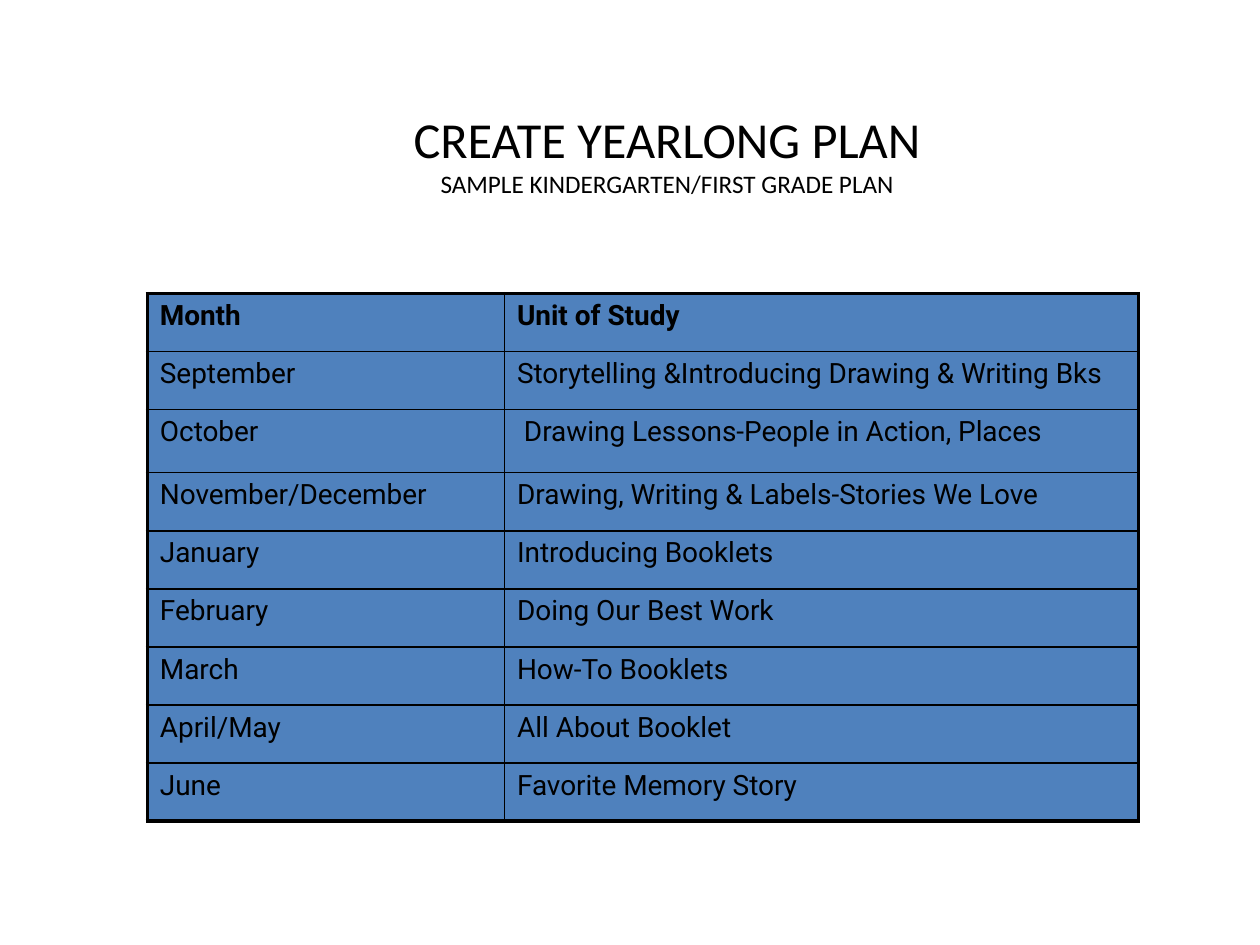
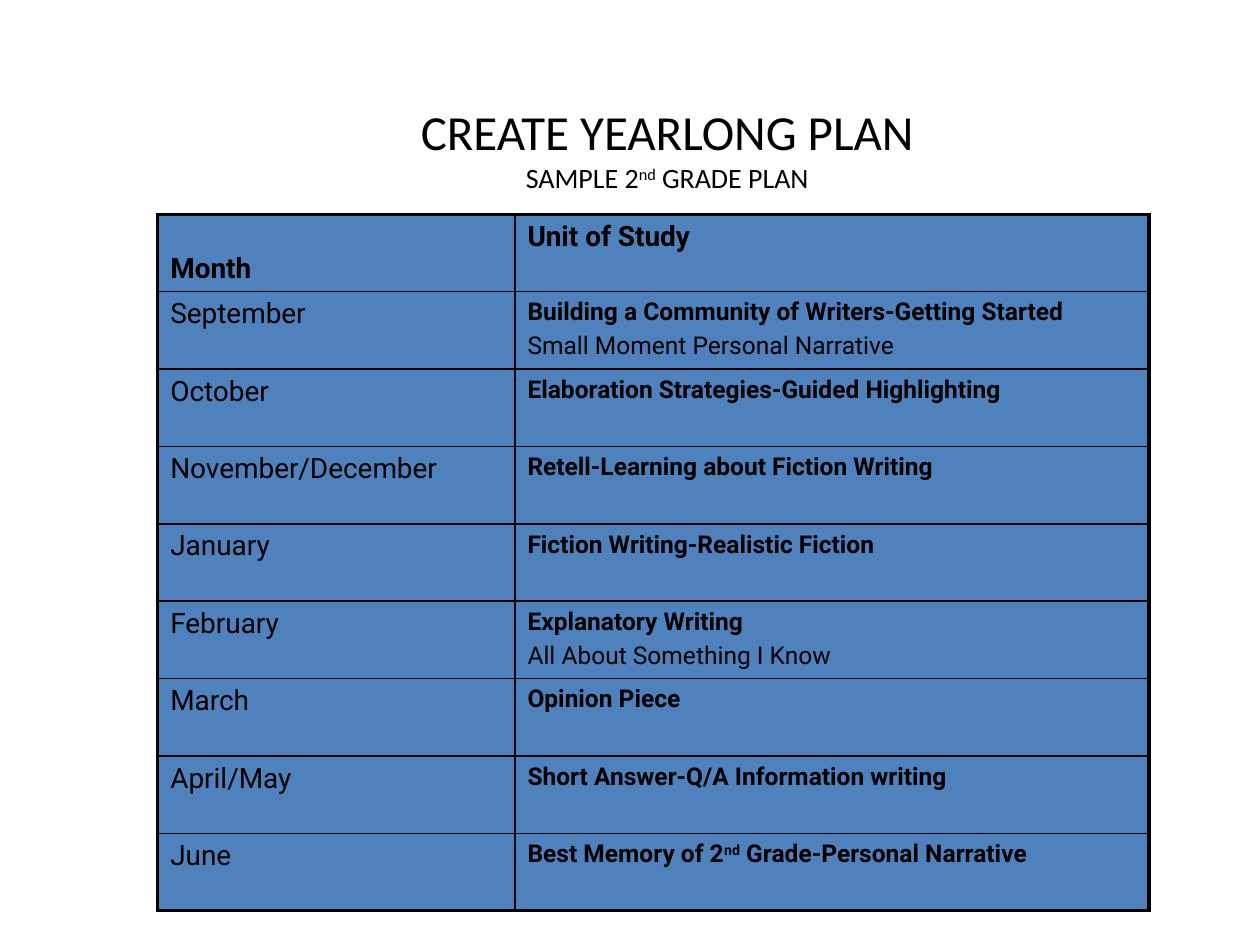
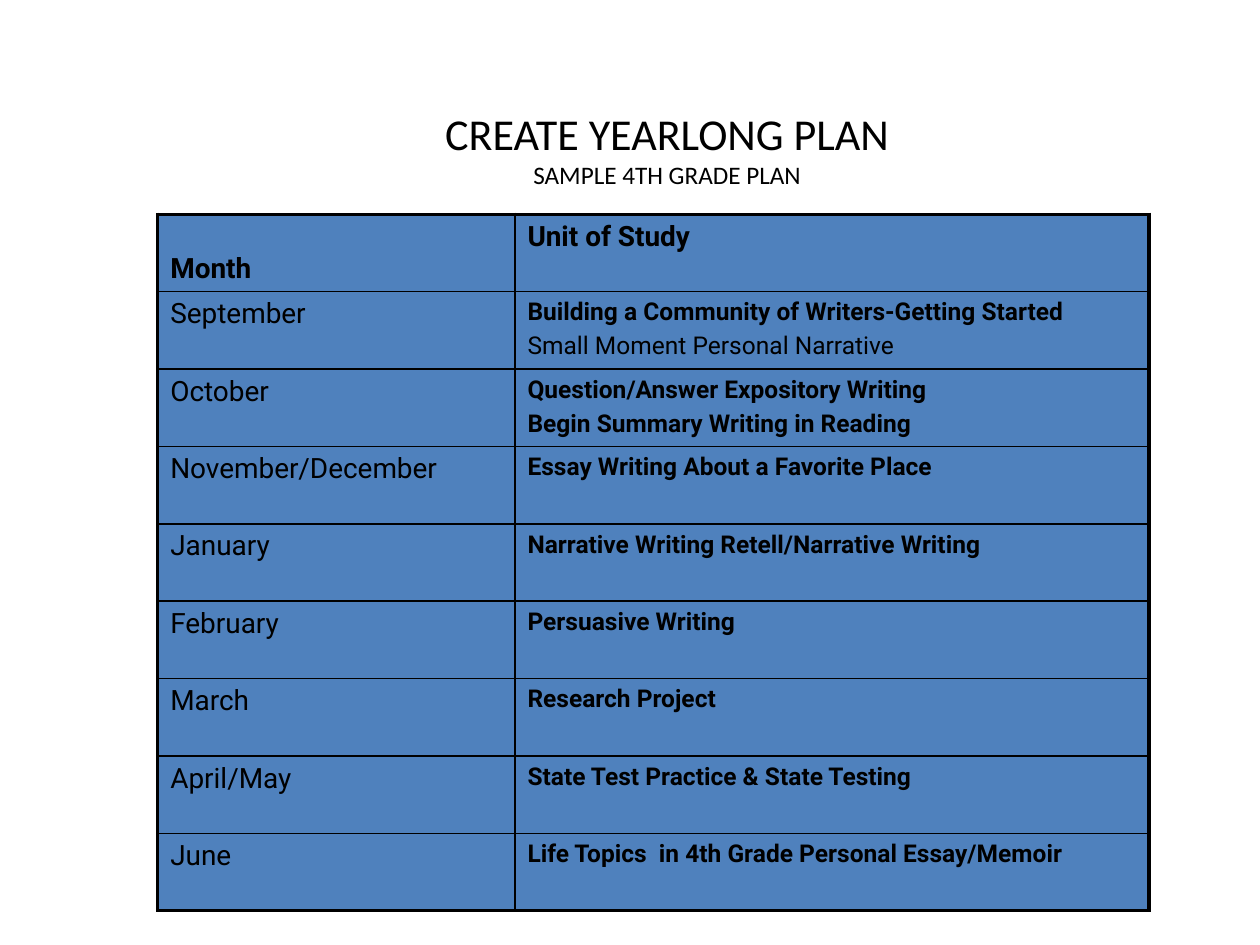
from dataclasses import dataclass

from lxml.etree import SubElement
from pptx import Presentation
from pptx.dml.color import RGBColor
from pptx.enum.text import MSO_ANCHOR, MSO_AUTO_SIZE, PP_ALIGN
from pptx.oxml.ns import qn
from pptx.util import Cm, Pt

# Content: text between ^ marks is raised; a unit may be (heading, detail)
HEADING = "CREATE YEARLONG PLAN"
COLUMN_HEADS = ("Month", "Unit of Study")
MONTHS = ("September", "October", "November/December", "January",
          "February", "March", "April/May", "June")
GETTING_STARTED = ("Building a Community of Writers-Getting Started",
                   "Small Moment Personal Narrative")

PLANS = [
    {
        "grade": "SAMPLE KINDERGARTEN/FIRST GRADE PLAN",
        "units": [
            "Storytelling &Introducing Drawing & Writing Bks",
            " Drawing Lessons-People in Action, Places",
            "Drawing, Writing & Labels-Stories We Love",
            "Introducing Booklets",
            "Doing Our Best Work",
            "How-To Booklets",
            "All About Booklet",
            "Favorite Memory Story",
        ],
        "layout": "compact", "heading_size": 28.8, "grade_size": 14.4,
    },
    {
        "grade": "SAMPLE 2^nd^ GRADE PLAN",
        "units": [
            GETTING_STARTED,
            "Elaboration Strategies-Guided Highlighting",
            "Retell-Learning about Fiction Writing",
            "Fiction Writing-Realistic Fiction",
            ("Explanatory Writing", "All About Something I Know"),
            "Opinion Piece",
            "Short Answer-Q/A Information writing",
            "Best Memory of 2^nd^ Grade-Personal Narrative",
        ],
        "layout": "detailed", "heading_size": 28, "grade_size": 16,
    },
    {
        "grade": "SAMPLE 4TH GRADE PLAN",
        "units": [
            GETTING_STARTED,
            "Question/Answer Expository Writing\nBegin Summary Writing in Reading",
            "Essay Writing About a Favorite Place",
            "Narrative Writing Retell/Narrative Writing",
            "Persuasive Writing",
            "Research Project",
            "State Test Practice & State Testing",
            "Life Topics  in 4th Grade Personal Essay/Memoir",
        ],
        "layout": "detailed", "heading_size": 25.2, "grade_size": 14.4,
    },
]


@dataclass(frozen=True)
class Theme:
    ink: str = "000000"
    cell: str = "4F81BD"
    title_font: str = "Calibri"
    table_font: str = "Roboto"
    month_size: float = 16
    line_gap: float = 2.8
    outer_line: float = 2.25
    inner_line: float = 1


THEME = Theme()

# Geometry in centimetres
TITLE_LEFT, TITLE_WIDTH = 2.11, 22.68
COLUMN_WIDTHS = (7.2, 12.78)
ROW_COUNT = len(MONTHS) + 1
LAYOUTS = {
    "compact": {
        "title_top": 3.02, "title_height": 0.15, "table": (2.97, 5.92),
        "rows": [1.27 if row == 2 else 1.17 for row in range(ROW_COUNT)],
        "unit_size": 16, "unit_bold": False, "month_anchor": MSO_ANCHOR.TOP,
    },
    "detailed": {
        "title_top": 2.11, "title_height": 1.75, "table": (3.18, 4.32),
        "rows": [1.56] * ROW_COUNT,
        "unit_size": 14, "unit_bold": True, "month_anchor": MSO_ANCHOR.BOTTOM,
    },
}


def set_font(font, name, size, bold=False):
    font.name, font.size, font.bold = name, Pt(size), bold
    font.color.rgb = RGBColor.from_string(THEME.ink)


def add_marked_runs(paragraph, text, size=None):
    for index, part in enumerate(text.split("^")):
        run = paragraph.add_run()
        run.text = part
        if size:
            run.font.size = Pt(size)
        if index % 2:
            run.font._element.set("baseline", "30000")


def add_title(slide, plan, layout):
    title = slide.shapes.title
    title.left, title.top = Cm(TITLE_LEFT), Cm(layout["title_top"])
    title.width, title.height = Cm(TITLE_WIDTH), Cm(layout["title_height"])
    frame = title.text_frame
    frame.auto_size, frame.word_wrap = MSO_AUTO_SIZE.NONE, True
    frame.vertical_anchor = MSO_ANCHOR.MIDDLE
    frame.margin_top = frame.margin_bottom = 0
    paragraph = frame.paragraphs[0]
    paragraph.alignment = PP_ALIGN.CENTER
    set_font(paragraph.font, THEME.title_font, plan["heading_size"])
    add_marked_runs(paragraph, HEADING, plan["heading_size"])
    paragraph.add_line_break()
    add_marked_runs(paragraph, plan["grade"], plan["grade_size"])


def draw_borders(cell, row, column):
    outer_sides = {"lnL": column == 0, "lnR": column == len(COLUMN_WIDTHS) - 1,
                   "lnT": row == 0, "lnB": row == ROW_COUNT - 1}
    properties = cell._tc.get_or_add_tcPr()
    for side, is_outer in outer_sides.items():
        width = THEME.outer_line if is_outer else THEME.inner_line
        line = SubElement(properties, qn(f"a:{side}"), w=str(Pt(width)))
        SubElement(SubElement(line, qn("a:solidFill")), qn("a:srgbClr"), val=THEME.ink)


def fill_cell(cell, lines, size):
    """Write (text, bold) lines, one paragraph each."""
    frame = cell.text_frame
    for index, (text, bold) in enumerate(lines):
        paragraph = frame.add_paragraph() if index else frame.paragraphs[0]
        if index:
            paragraph.space_before = Pt(THEME.line_gap)
        set_font(paragraph.font, THEME.table_font, size, bold)
        add_marked_runs(paragraph, text)


def unit_lines(unit, bold):
    heading, *details = (unit,) if isinstance(unit, str) else unit
    return ([(line, bold) for line in heading.split("\n")]
            + [(detail, False) for detail in details])


def add_plan_table(slide, plan, layout):
    left, top = layout["table"]
    table = slide.shapes.add_table(
        ROW_COUNT, len(COLUMN_WIDTHS), Cm(left), Cm(top),
        Cm(sum(COLUMN_WIDTHS)), Cm(sum(layout["rows"]))).table
    table.first_row = table.horz_banding = False
    for column, width in zip(table.columns, COLUMN_WIDTHS):
        column.width = Cm(width)
    for row, height in zip(table.rows, layout["rows"]):
        row.height = Cm(height)

    # Borders come before the fill in the cell properties
    for row in range(ROW_COUNT):
        for column in range(len(COLUMN_WIDTHS)):
            cell = table.cell(row, column)
            draw_borders(cell, row, column)
            cell.fill.solid()
            cell.fill.fore_color.rgb = RGBColor.from_string(THEME.cell)

    for column, head in enumerate(COLUMN_HEADS):
        fill_cell(table.cell(0, column), [(head, True)], THEME.month_size)
    table.cell(0, 0).vertical_anchor = layout["month_anchor"]
    for row, (month, unit) in enumerate(zip(MONTHS, plan["units"]), start=1):
        fill_cell(table.cell(row, 0), [(month, False)], THEME.month_size)
        fill_cell(table.cell(row, 1), unit_lines(unit, layout["unit_bold"]),
                  layout["unit_size"])


def main():
    deck = Presentation()
    deck.slide_width, deck.slide_height = Cm(25.4), Cm(19.05)
    title_only = deck.slide_layouts.get_by_name("Title Only")
    for plan in PLANS:
        slide = deck.slides.add_slide(title_only)
        layout = LAYOUTS[plan["layout"]]
        add_title(slide, plan, layout)
        add_plan_table(slide, plan, layout)
    deck.save("out.pptx")


if __name__ == "__main__":
    main()
